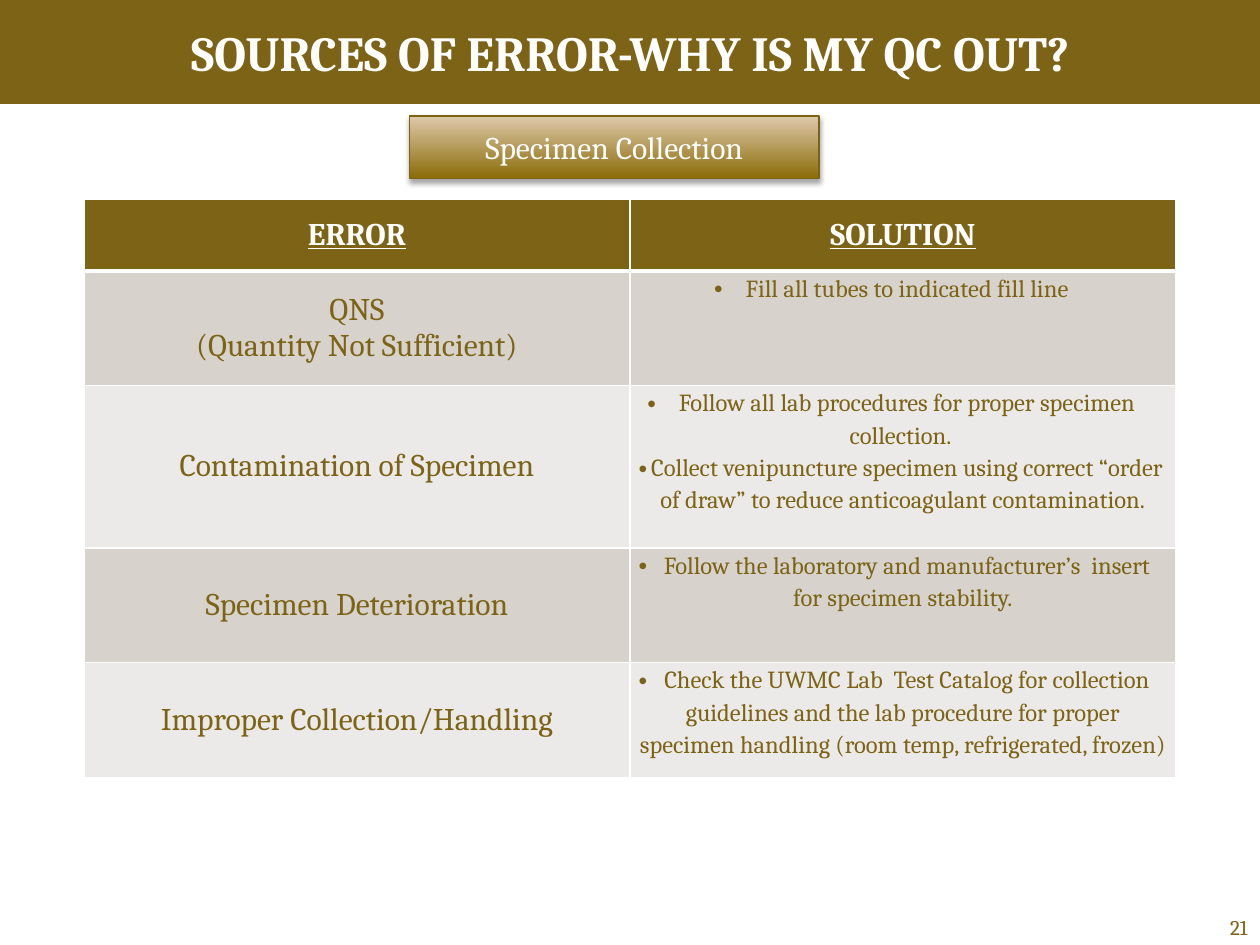
from typing import NamedTuple

from lxml import etree
from pptx import Presentation
from pptx import util as u
from pptx.dml.color import RGBColor
from pptx.enum import shapes, text
from pptx.oxml import parse_xml
from pptx.oxml.ns import nsdecls, qn

SLIDE_W, SLIDE_H = 10, 7.5
COLORS = {
    "gold": "7C6316", "white": "FFFFFF", "band_dark": "D7D3CC", "band_light": "ECEAE8",
    "label_dark": "8B6B07", "label_light": "DEC9AB", "label_line": "7C6213",
    "shadow": "000000",
}
ALIGN, ANCHOR = text.PP_ALIGN, text.MSO_ANCHOR


class Area(NamedTuple):
    """Left, top, width and height as shares of the slide."""
    left: float
    top: float
    width: float
    height: float

    def emu(self) -> list[int]:
        sides = (SLIDE_W, SLIDE_H, SLIDE_W, SLIDE_H)
        return [u.Inches(share * side) for share, side in zip(self, sides)]


class ErrorRow(NamedTuple):
    height: float
    error: list[str]
    solutions: list[str]


BANNER = Area(0, 0, 1, 0.11)
TITLE = Area(0.05, 0, 0.9, 0.11)
TOPIC = Area(0.325, 0.92 / SLIDE_H, 0.325, 0.5 / SLIDE_H)
PAGE_NUMBER = Area(0.925, 7.25 / SLIDE_H, 0.075, 0.26 / SLIDE_H)
HEADINGS = ["ERROR", "SOLUTION"]
HEADING_HEIGHT = 0.57
ERRORS = [
    ErrorRow(0.91, ["QNS", "(Quantity Not Sufficient)"],
             ["Fill all tubes to indicated fill line"]),
    ErrorRow(1.29, ["Contamination of Specimen"],
             ["Follow all lab procedures for proper specimen collection. ",
              "Collect venipuncture specimen using correct “order of draw” "
              "to reduce anticoagulant contamination."]),
    ErrorRow(0.91, ["Specimen Deterioration"],
             ["Follow the laboratory and manufacturer’s  insert for specimen stability."]),
    ErrorRow(0.91, ["Improper Collection/Handling"],
             ["Check the UWMC Lab  Test Catalog for collection guidelines and the lab "
              "procedure for proper specimen handling (room temp, refrigerated, frozen)"]),
]
TABLE = Area(1 / 15, 1.58 / SLIDE_H, 13 / 15,
             (HEADING_HEIGHT + sum(row.height for row in ERRORS)) / SLIDE_H)

BODY = {"size": u.Pt(18), "bold": False, "underline": False, "color": "gold"}
HEADING = {**BODY, "bold": True, "underline": True, "color": "white"}
SOLUTION = {**BODY, "size": u.Pt(14)}
TITLE_FONT = {"size": u.Pt(28), "bold": True, "color": "white"}
TOPIC_FONT = {"size": u.Pt(18), "color": "white"}
PAGE_FONT = {"size": u.Pt(12), "color": "gold"}


def rgb(name: str) -> RGBColor:
    return RGBColor.from_string(COLORS[name])


def add_bullet(paragraph) -> None:
    ppr = paragraph._p.get_or_add_pPr()
    ppr.set("marL", "0")
    ppr.set("indent", str(-u.Inches(0.25)))
    etree.SubElement(ppr, qn("a:buFont")).set("typeface", "Arial")
    etree.SubElement(ppr, qn("a:buChar")).set("char", "•")


def write(frame, lines: list[str], font: dict, align=ALIGN.CENTER, bullets=False) -> None:
    for index, line in enumerate(lines):
        paragraph = frame.add_paragraph() if index else frame.paragraphs[0]
        paragraph.alignment = align
        if bullets:
            paragraph.line_spacing = 1.15
            add_bullet(paragraph)
        run = paragraph.add_run()
        run.text = line
        run.font.name = "Cambria"
        for key, value in font.items():
            if key == "color":
                run.font.color.rgb = rgb(value)
            else:
                setattr(run.font, key, value)


def set_margins(target, left=0.0, top=0.0, right=0.0, bottom=0.0) -> None:
    margins = {"left": left, "top": top, "right": right, "bottom": bottom}
    for side, inches in margins.items():
        setattr(target, f"margin_{side}", u.Inches(inches))


def add_label(slide, area: Area, line: str, font: dict, align=ALIGN.CENTER,
              anchor=ANCHOR.MIDDLE, right=0.0, bottom=0.0) -> None:
    frame = slide.shapes.add_textbox(*area.emu()).text_frame
    frame.word_wrap = True
    frame.vertical_anchor = anchor
    set_margins(frame, right=right, bottom=bottom)
    write(frame, [line], font, align)


def add_banner(slide) -> None:
    banner = slide.shapes.add_shape(shapes.MSO_SHAPE.RECTANGLE, *BANNER.emu())
    banner.shadow.inherit = False
    banner.fill.solid()
    banner.fill.fore_color.rgb = rgb("gold")
    banner.line.fill.background()


def add_topic(slide) -> None:
    topic = slide.shapes.add_shape(shapes.MSO_SHAPE.RECTANGLE, *TOPIC.emu())
    topic.fill.gradient()
    topic.fill.gradient_angle = 90
    for stop, position, name in zip(topic.fill.gradient_stops, (0, 1),
                                    ("label_dark", "label_light")):
        stop.position = position
        stop.color.rgb = rgb(name)
    topic.line.color.rgb = rgb("label_line")
    topic.line.width = u.Pt(0.75)
    topic.shadow.inherit = False
    topic._element.spPr.find(qn("a:effectLst")).append(parse_xml(
        f'<a:outerShdw {nsdecls("a")} blurRad="{u.Pt(3.1)}" dist="{u.Pt(1.8)}" '
        f'dir="5400000" rotWithShape="0"><a:srgbClr val="{COLORS["shadow"]}">'
        '<a:alpha val="35000"/></a:srgbClr></a:outerShdw>'))
    topic.text_frame.vertical_anchor = ANCHOR.MIDDLE
    write(topic.text_frame, ["Specimen Collection"], TOPIC_FONT)


def style_cell(cell, fill: str, row: int) -> None:
    cell.fill.solid()
    cell.fill.fore_color.rgb = rgb(fill)
    # A thick rule separates the headings from the body
    widths = {"L": 1, "R": 1, "T": 3 if row == 1 else 1, "B": 3 if row == 0 else 1}
    for index, (side, points) in enumerate(widths.items()):
        cell._tc.get_or_add_tcPr().insert(index, parse_xml(
            f'<a:ln{side} {nsdecls("a")} w="{u.Pt(points)}"><a:solidFill>'
            f'<a:srgbClr val="{COLORS["white"]}"/></a:solidFill></a:ln{side}>'))


def add_error_table(slide) -> None:
    table = slide.shapes.add_table(len(ERRORS) + 1, len(HEADINGS), *TABLE.emu()).table
    table.rows[0].height = u.Inches(HEADING_HEIGHT)
    for column, heading in enumerate(HEADINGS):
        cell = table.cell(0, column)
        style_cell(cell, "gold", 0)
        cell.vertical_anchor = ANCHOR.MIDDLE
        write(cell.text_frame, [heading], HEADING)
    for row, entry in enumerate(ERRORS, 1):
        table.rows[row].height = u.Inches(entry.height)
        error, solution = table.cell(row, 0), table.cell(row, 1)
        for cell in (error, solution):
            style_cell(cell, "band_dark" if row % 2 else "band_light", row)
        error.vertical_anchor = ANCHOR.MIDDLE
        write(error.text_frame, entry.error, BODY)
        set_margins(solution, left=0.07, right=0.07)
        write(solution.text_frame, entry.solutions, SOLUTION, bullets=True)


def main() -> None:
    deck = Presentation()
    deck.slide_width, deck.slide_height = u.Inches(SLIDE_W), u.Inches(SLIDE_H)
    slide = deck.slides.add_slide(deck.slide_layouts[6])
    add_banner(slide)
    add_error_table(slide)
    add_label(slide, TITLE, "SOURCES OF ERROR-WHY IS MY QC OUT?", TITLE_FONT)
    add_label(slide, PAGE_NUMBER, "21", PAGE_FONT, ALIGN.RIGHT, ANCHOR.BOTTOM, 0.1, 0.05)
    add_topic(slide)
    deck.save("out.pptx")


if __name__ == "__main__":
    main()
